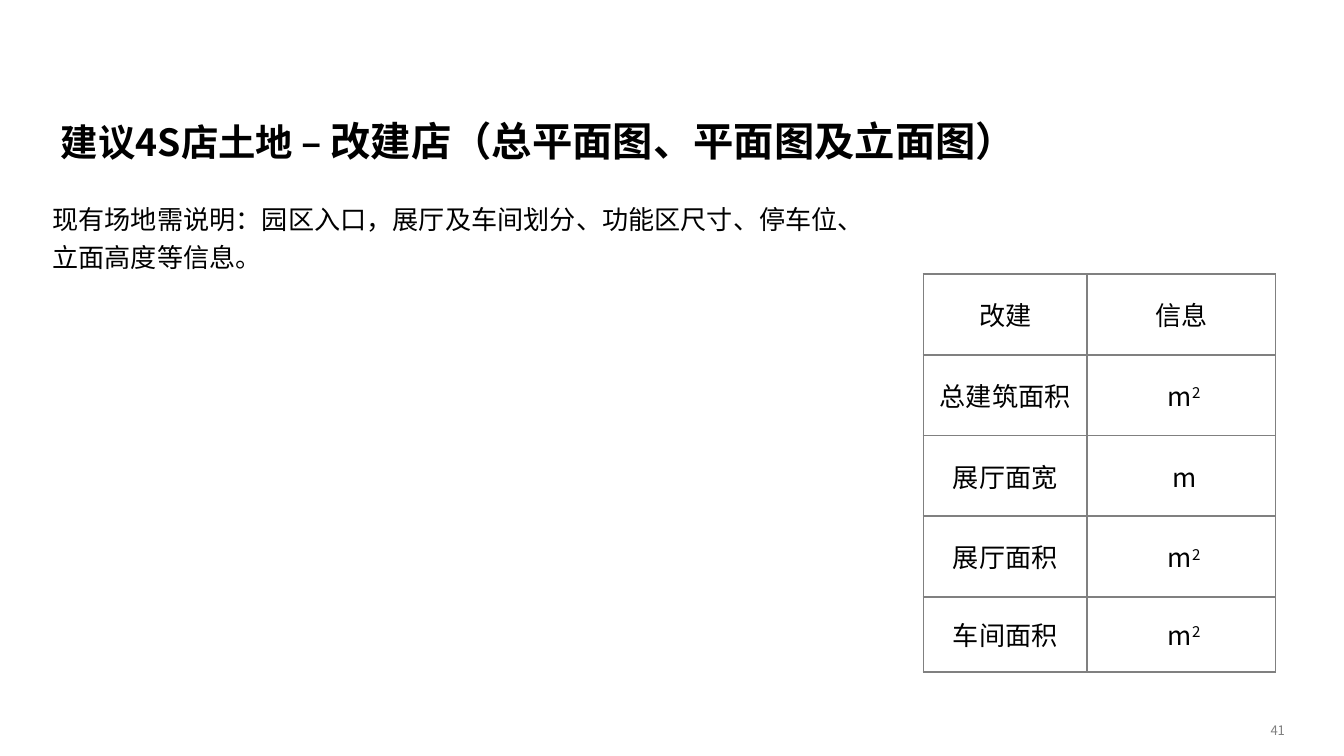
from dataclasses import dataclass

from lxml.etree import SubElement
from pptx import Presentation
from pptx.dml.color import RGBColor
from pptx.enum.text import MSO_ANCHOR, PP_ALIGN
from pptx.oxml.ns import qn
from pptx.util import Inches, Pt


@dataclass(frozen=True)
class Theme:
    font: str = "Noto Sans CJK SC"
    ink: str = "000000"
    muted: str = "808080"
    paper: str = "FFFFFF"
    title_size: float = 20
    title_detail_size: float = 21.6
    body_size: float = 14
    number_size: float = 7
    border_width: float = 1


class SlideBuilder:
    def __init__(self, slide, theme):
        self.slide = slide
        self.theme = theme

    def set_formats(self, target, **formats):
        for name, value in formats.items():
            setattr(target, name, value)

    def set_frame(self, target, anchor):
        self.set_formats(target, vertical_anchor=anchor, margin_left=0,
                         margin_right=0, margin_top=0, margin_bottom=0)

    def add_run(self, paragraph, text, size, color=None, bold=False, superscript=False):
        run = paragraph.add_run()
        run.text = text
        self.set_formats(run.font, name=self.theme.font, size=Pt(size), bold=bold)
        run.font.color.rgb = RGBColor.from_string(color or self.theme.ink)
        properties = run.font._element
        SubElement(properties, qn("a:ea"), typeface=self.theme.font)
        if superscript:
            properties.set("baseline", "30000")

    def add_text(self, box, runs, anchor=MSO_ANCHOR.TOP, **paragraph_formats):
        shape = self.slide.shapes.add_textbox(*map(Inches, box))
        frame = shape.text_frame
        frame.word_wrap = True
        self.set_frame(frame, anchor)
        paragraph = frame.paragraphs[0]
        self.set_formats(paragraph, **paragraph_formats)
        for run in runs:
            self.add_run(paragraph, **run)

    def add_borders(self, cell):
        properties = cell._tc.get_or_add_tcPr()
        width = str(Pt(self.theme.border_width))
        for index, side in enumerate(("a:lnL", "a:lnR", "a:lnT", "a:lnB")):
            line = properties.makeelement(qn(side), {"w": width})
            fill = SubElement(line, qn("a:solidFill"))
            SubElement(fill, qn("a:srgbClr"), val=self.theme.muted)
            properties.insert(index, line)

    def fill_cell(self, cell, text, superscript=""):
        self.set_frame(cell, MSO_ANCHOR.MIDDLE)
        cell.fill.solid()
        cell.fill.fore_color.rgb = RGBColor.from_string(self.theme.paper)
        self.add_borders(cell)
        paragraph = cell.text_frame.paragraphs[0]
        paragraph.alignment = PP_ALIGN.CENTER
        self.add_run(paragraph, text, self.theme.body_size)
        if superscript:
            self.add_run(paragraph, superscript, self.theme.body_size, superscript=True)

    def add_table(self, left, top, widths, heights, rows):
        box = (left, top, sum(widths), sum(heights))
        frame = self.slide.shapes.add_table(len(heights), len(widths), *map(Inches, box))
        table = frame.table
        self.set_formats(table, first_row=False, horz_banding=False)
        for column, width in zip(table.columns, widths):
            column.width = Inches(width)
        for row, height, (label, value, superscript) in zip(table.rows, heights, rows):
            row.height = Inches(height)
            self.fill_cell(row.cells[0], label)
            self.fill_cell(row.cells[1], value, superscript)


def main():
    theme = Theme()
    presentation = Presentation()
    presentation.slide_width = Inches(10)
    presentation.slide_height = Inches(10 * 9 / 16)
    slide = presentation.slides.add_slide(presentation.slide_layouts[6])
    builder = SlideBuilder(slide, theme)

    builder.add_text(
        (0.39, 1.47, 6.09, 3.78),
        [{"text": "现有场地需说明：园区入口，展厅及车间划分、功能区尺寸、停车位、立面高度等信息。",
          "size": theme.body_size}],
        line_spacing=1.2,
    )
    builder.add_text(
        (0.39, 0.88, 9.18, 0.35),
        [{"text": " 建议4S店土地 – ", "size": theme.title_size, "bold": True},
         {"text": "改建店（总平面图、平面图及立面图）", "size": theme.title_detail_size,
          "bold": True}],
        anchor=MSO_ANCHOR.BOTTOM,
        line_spacing=0.9,
    )
    builder.add_text(
        (9.17, 5.38, 0.39, 0.11),
        [{"text": "41", "size": theme.number_size, "color": theme.muted}],
        anchor=MSO_ANCHOR.MIDDLE,
        alignment=PP_ALIGN.RIGHT,
    )
    builder.add_table(
        6.87, 2.04, [1.22, 1.4], [0.6] * 4 + [0.56],
        [("改建", "信息", ""),
         ("总建筑面积", " m", "2"),
         ("展厅面宽", " m", ""),
         ("展厅面积", " m", "2"),
         ("车间面积", " m", "2")],
    )
    presentation.save("out.pptx")


if __name__ == "__main__":
    main()
